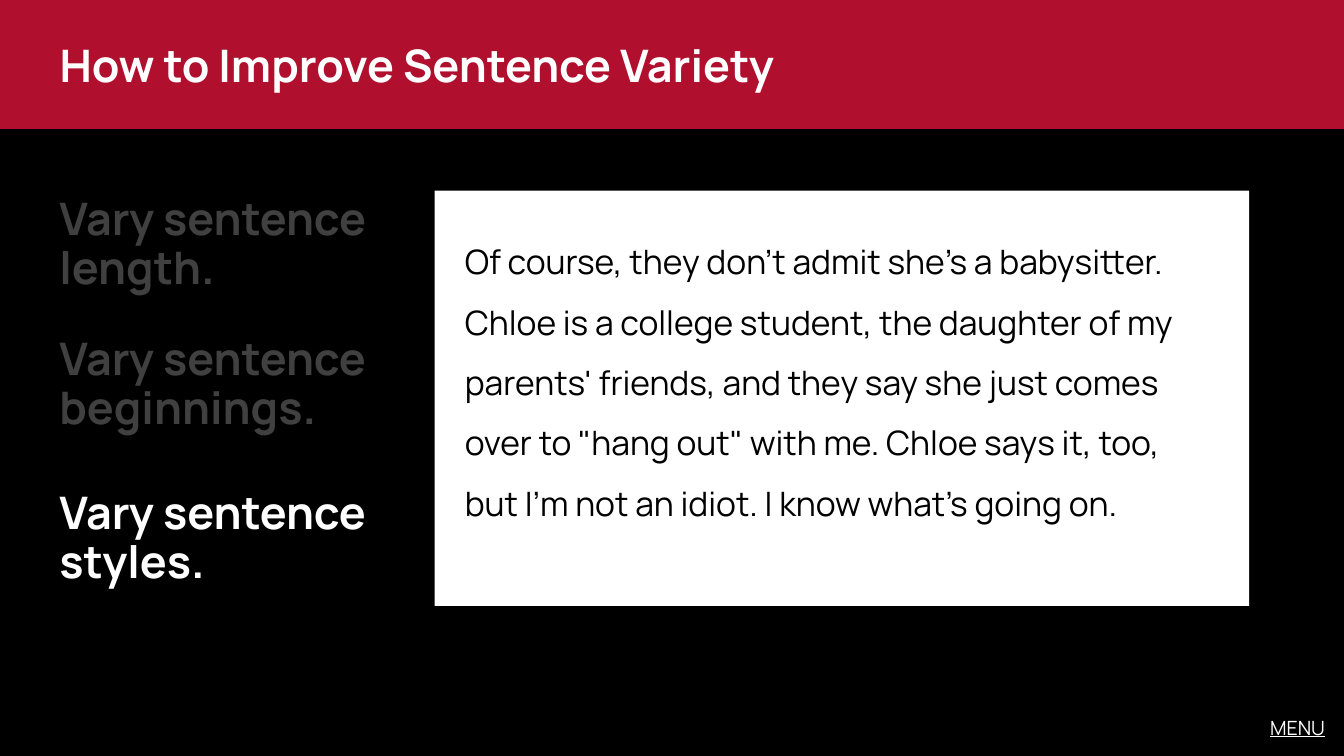
from dataclasses import dataclass

from pptx import Presentation
from pptx.dml.color import RGBColor
from pptx.enum.shapes import MSO_SHAPE
from pptx.enum.text import MSO_ANCHOR, MSO_AUTO_SIZE, PP_ALIGN
from pptx.util import Inches, Pt

RECTANGLE = MSO_SHAPE.RECTANGLE
TOP = MSO_ANCHOR.TOP
FIT_SHAPE = MSO_AUTO_SIZE.SHAPE_TO_FIT_TEXT
NO_FIT = MSO_AUTO_SIZE.NONE
LEFT, RIGHT = PP_ALIGN.LEFT, PP_ALIGN.RIGHT
TITLE_ONLY = 5


@dataclass(frozen=True)
class Theme:
    font: str = "Manrope"
    black: str = "000000"
    white: str = "FFFFFF"
    red: str = "B10F2E"
    dimmed: str = "404040"
    heading_size: int = 32
    body_size: int = 24
    menu_size: int = 14


THEME = Theme()
WIDTH, HEIGHT = 13.33, 7.5
MARGIN = 0.49
CONTENT_TOP = 1.89
TIP_HEIGHT = 1.08

# Tip text, top, box width, active
TIPS = [
    ("Vary sentence length.", CONTENT_TOP, 4.65, False),
    ("Vary sentence beginnings.", 3.28, 5.37, False),
    ("Vary sentence styles.", 4.81, 4.23, True),
]
EXAMPLE = (
    "Of course, they don't admit she's a babysitter. Chloe is a college "
    "student, the daughter of my parents' friends, and they say she just "
    "comes over to \"hang out\" with me. Chloe says it, too, but I'm not an "
    "idiot. I know what's going on."
)


def write_text(box, text, *, size, color, bold=False, underline=False,
               align=LEFT, line_spacing=None, space_before=0,
               inset=None, fit=FIT_SHAPE):
    frame = box.text_frame
    frame.word_wrap = True
    frame.auto_size = fit
    frame.vertical_anchor = TOP
    if inset is not None:
        frame.margin_left = frame.margin_right = Inches(inset)
        frame.margin_top = frame.margin_bottom = Inches(inset)
    para = frame.paragraphs[0]
    para.alignment = align
    para.line_spacing = line_spacing
    para.space_before = Pt(space_before)
    span = para.add_run()
    span.text = text
    span.font.name = THEME.font
    span.font.size = Pt(size)
    span.font.bold = bold
    span.font.underline = underline
    span.font.color.rgb = RGBColor.from_string(color)


def add_panel(page, left, top, width, height, color):
    panel = page.shapes.add_shape(RECTANGLE, Inches(left), Inches(top),
                                  Inches(width), Inches(height))
    panel.shadow.inherit = False
    panel.fill.solid()
    panel.fill.fore_color.rgb = RGBColor.from_string(color)
    panel.line.fill.background()
    return panel


def add_text(page, text, left, top, width, height, **text_format):
    box = page.shapes.add_textbox(Inches(left), Inches(top),
                                  Inches(width), Inches(height))
    write_text(box, text, **text_format)


def add_title(page, text):
    band = add_panel(page, 0, 0, WIDTH, 1.28, THEME.red)
    title = page.shapes.title
    title.left, title.top = Inches(MARGIN), Inches(0.32)
    title.width, title.height = Inches(8.48), Inches(0.64)
    write_text(title, text, size=THEME.heading_size, color=THEME.white,
               bold=True)
    # Keep the band behind the title
    title._element.addprevious(band._element)


def main():
    deck = Presentation()
    deck.slide_width, deck.slide_height = Inches(WIDTH), Inches(HEIGHT)
    page = deck.slides.add_slide(deck.slide_layouts[TITLE_ONLY])
    page.background.fill.solid()
    page.background.fill.fore_color.rgb = RGBColor.from_string(THEME.black)

    # Header
    add_title(page, "How to Improve Sentence Variety")

    # Tips, with only the current one lit
    for text, top, width, active in TIPS:
        add_text(page, text, MARGIN, top, width, TIP_HEIGHT,
                 size=THEME.heading_size, bold=True,
                 color=THEME.white if active else THEME.dimmed,
                 line_spacing=Pt(35), space_before=30)

    # Example passage
    panel = add_panel(page, 4.31, CONTENT_TOP, 8.08, 4.12, THEME.white)
    write_text(panel, EXAMPLE, size=THEME.body_size, color=THEME.black,
               line_spacing=1.5, space_before=18, inset=0.3, fit=NO_FIT)

    # Menu label
    add_text(page, "MENU", 12.32, 7.05, 0.92, 0.34, size=THEME.menu_size,
             color=THEME.white, underline=True, align=RIGHT)

    deck.save("out.pptx")


if __name__ == "__main__":
    main()
